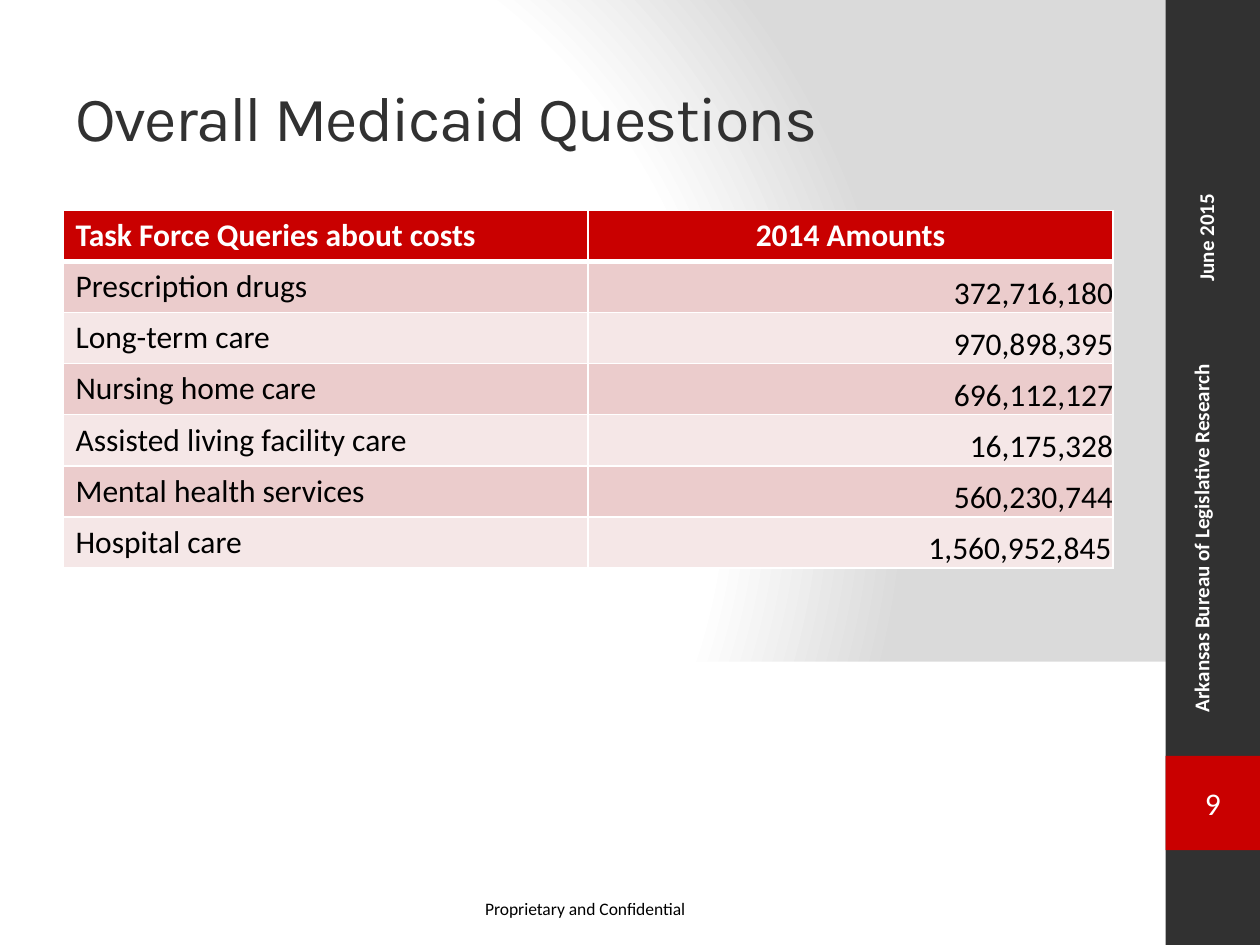
from lxml.etree import SubElement
from pptx import Presentation
from pptx.dml.color import RGBColor
from pptx.enum.shapes import MSO_SHAPE
from pptx.enum.text import MSO_ANCHOR, PP_ALIGN
from pptx.oxml import parse_xml
from pptx.oxml.ns import nsdecls, qn
from pptx.util import Cm, Pt

COLORS = {
    "white": "FFFFFF", "black": "000000", "dark": "313131", "red": "C90000",
    "gray": "DADADA", "rose": "EBCCCC", "blush": "F5E7E7",
}


def color(name):
    return RGBColor.from_string(COLORS[name])


def write(frame, text, align, formats, color_name):
    para = frame.paragraphs[0]
    para.alignment = align
    span = para.add_run()
    span.text = text
    for name, value in formats.items():
        setattr(span.font, name, value)
    span.font.color.rgb = color(color_name)
    return span


deck = Presentation()
deck.slide_width, deck.slide_height = Cm(25.4), Cm(19.05)
page = deck.slides.add_slide(deck.slide_layouts[5])

page.background.fill.solid()
solid = page.background._cSld.bg.bgPr.find(qn("a:solidFill"))
stops = "".join(
    f'<a:gs pos="{position}"><a:srgbClr val="{COLORS[name]}"/></a:gs>'
    for position, name in [(0, "white"), (75000, "white"), (100000, "gray")]
)
solid.getparent().replace(solid, parse_xml(
    f'<a:gradFill {nsdecls("a")} rotWithShape="1"><a:gsLst>{stops}</a:gsLst>'
    '<a:path path="circle"><a:fillToRect l="20000" t="50000" r="100000" b="50000"/>'
    '</a:path></a:gradFill>'
))

panels = [
    ("white", 0, 13.34, 23.7, 5.71, ""),
    ("dark", 23.5, 0, 1.9, 19.05, ""),
    ("red", 23.5, 15.24, 1.9, 1.9, "9"),
]
for fill, left, top, width, height, text in panels:
    panel = page.shapes.add_shape(MSO_SHAPE.RECTANGLE, Cm(left), Cm(top), Cm(width), Cm(height))
    panel.shadow.inherit = False
    panel.fill.solid()
    panel.fill.fore_color.rgb = color(fill)
    panel.line.fill.background()
    if text:
        panel.text_frame.vertical_anchor = MSO_ANCHOR.MIDDLE
        write(panel.text_frame, text, PP_ALIGN.CENTER, {"size": Pt(18), "name": "Calibri"}, "white")

labels = [
    ("Proprietary and Confidential", 9.53, 17.98, 4.6, 0.69, 10, "black", False),
    ("Arkansas Bureau of Legislative Research", 23.83, 5.92, 1.02, 8.69, 12, "white", True),
    ("June 2015", 23.93, 1.27, 1.02, 4.65, 12, "white", True),
]
for text, left, top, width, height, size, ink, vertical in labels:
    box = page.shapes.add_textbox(Cm(left), Cm(top), Cm(width), Cm(height))
    box.text_frame.word_wrap = vertical
    if vertical:
        box.text_frame._txBody.bodyPr.set("vert", "vert270")
    formats = {"size": Pt(size), "name": "Calibri", "bold": vertical}
    write(box.text_frame, text, PP_ALIGN.LEFT, formats, ink)

title = page.shapes.title
title.left, title.top, title.width, title.height = Cm(1.27), Cm(0.76), Cm(21.17), Cm(3.18)
title.text_frame.vertical_anchor = MSO_ANCHOR.MIDDLE
title_span = write(title.text_frame, "Overall Medicaid Questions", PP_ALIGN.LEFT,
                   {"size": Pt(36), "name": "Karla"}, "dark")
title_span.font._element.set("spc", "-100")

rows = [
    ("Task Force Queries about costs", "2014 Amounts"),
    ("Prescription drugs", "372,716,180"),
    ("Long-term care", "970,898,395"),
    ("Nursing home care", "696,112,127"),
    ("Assisted living facility care", "16,175,328"),
    ("Mental health services", "560,230,744"),
    ("Hospital care", "1,560,952,845"),
]
table = page.shapes.add_table(len(rows), 2, Cm(1.27), Cm(4.24), Cm(21.17), Cm(7.21)).table
for row_index, texts in enumerate(rows):
    table.rows[row_index].height = Cm(1.03)
    header = row_index == 0
    fill = "red" if header else ("blush", "rose")[row_index % 2]
    for column_index, text in enumerate(texts):
        cell = table.cell(row_index, column_index)
        amount = column_index == 1 and not header
        align = PP_ALIGN.LEFT
        if column_index == 1:
            align = PP_ALIGN.CENTER if header else PP_ALIGN.RIGHT
        if amount:
            cell.vertical_anchor = MSO_ANCHOR.BOTTOM
            inset = Cm(0.03) if row_index == len(rows) - 1 else 0
            cell.margin_left = cell.margin_right = cell.margin_top = inset
            cell.margin_bottom = 0
        properties = cell._tc.get_or_add_tcPr()
        for side in ("lnL", "lnR", "lnT", "lnB"):
            thick = (side, row_index) in (("lnB", 0), ("lnT", 1))
            border = SubElement(properties, qn(f"a:{side}"), w=str(Pt(3 if thick else 1)))
            paint = SubElement(border, qn("a:solidFill"))
            SubElement(paint, qn("a:srgbClr"), val=COLORS["white"])
        cell.fill.solid()
        cell.fill.fore_color.rgb = color(fill)
        formats = {"size": Pt(18), "name": "Calibri", "bold": header}
        write(cell.text_frame, text, align, formats, "white" if header else "black")

deck.save("out.pptx")
